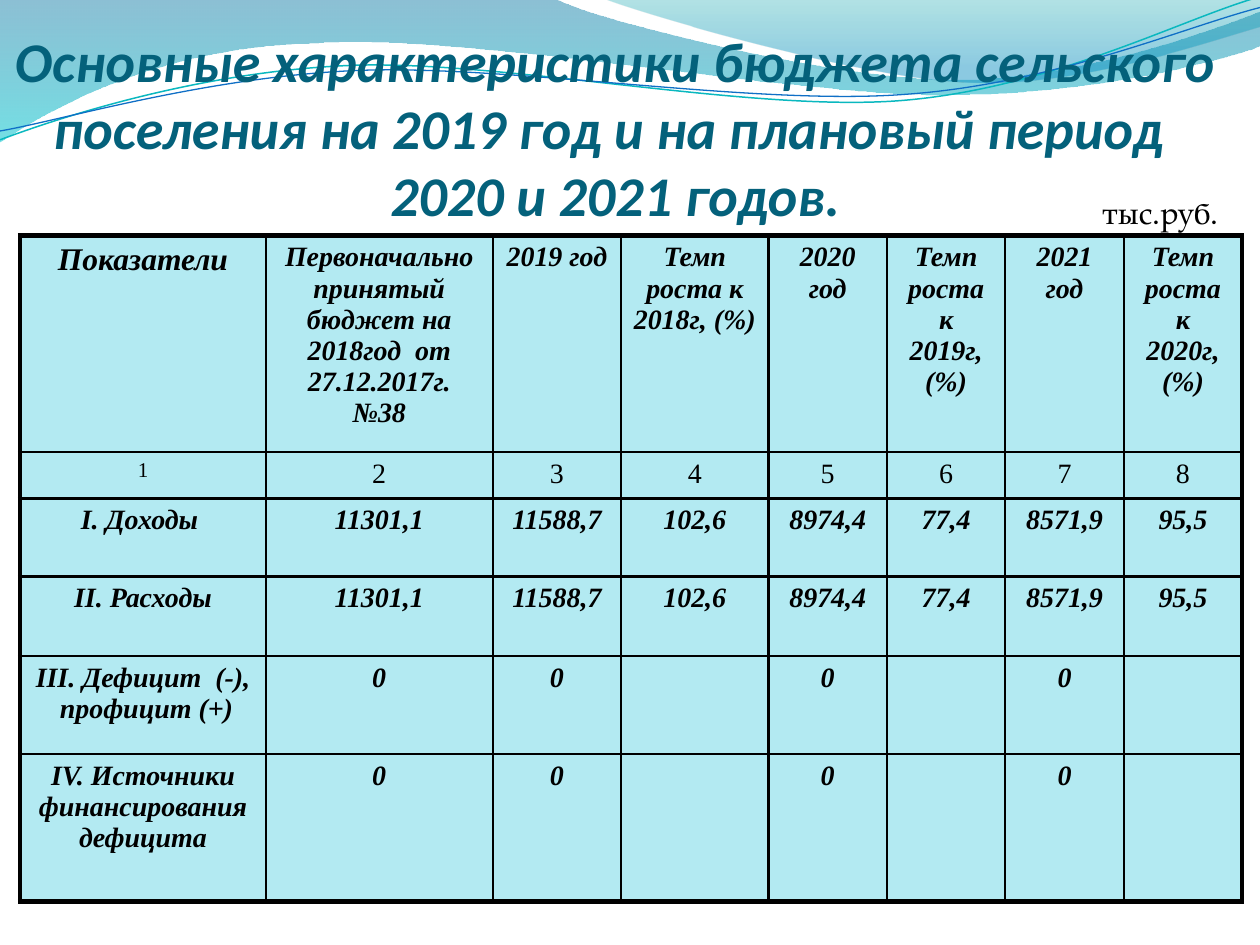
from math import cos, radians, sin

from lxml import etree
from pptx import Presentation
from pptx.dml.color import RGBColor
from pptx.enum.text import MSO_ANCHOR, PP_ALIGN
from pptx.oxml.ns import qn
from pptx.util import Inches, Pt

CENTER, RIGHT = PP_ALIGN.CENTER, PP_ALIGN.RIGHT
TOP, BOTTOM = MSO_ANCHOR.TOP, MSO_ANCHOR.BOTTOM

# Content
TITLE = ("Основные характеристики бюджета сельского поселения "
         "на 2019 год и на плановый период \v2020 и 2021 годов.")
UNIT = "тыс.руб."
ROWS = [
    ["Показатели",
     "Первоначально принятый бюджет на 2018год  от 27.12.2017г. №38",
     "2019 год", "Темп роста к 2018г, (%)",
     "2020 год", "Темп роста к 2019г, (%)",
     "2021 год", "Темп роста к 2020г, (%)"],
    ["1", "2", "3", "4", "5", "6", "7", "8"],
    ["I. Доходы ", "11301,1", "11588,7", "102,6", "8974,4", "77,4",
     "8571,9", "95,5"],
    ["II. Расходы", "11301,1", "11588,7", "102,6", "8974,4", "77,4",
     "8571,9", "95,5"],
    ["III. Дефицит  (-),\n профицит (+)", "0", "0", "", "0", "", "0", ""],
    ["IV. Источники финансирования дефицита",
     "0", "0", "", "0", "", "0", ""],
]
WIDTHS = [1.95, 1.8, 1.02, 1.17] + [0.94] * 4
HEIGHTS = [1.72, 0.32, 0.62, 0.63, 0.78, 1.17]

# Wave outlines: one point is a straight step, three are a Bezier curve
BANDS = [
    ([[(0, 0)], [(4.4, -0.01)],
      [(4.76, 0.17), (6.64, 0.63), (7.58, 0.63)],
      [(8.53, 0.63), (9.58, 0.26), (10, 0.09)], [(10.01, 0.36)],
      [(9.83, 0.44), (8.7, 0.76), (7.46, 0.75)],
      [(6.22, 0.75), (3.82, 0.28), (2.57, 0.34)],
      [(1.29, 0.36), (0.46, 0.83), (-0.01, 1.13)]],
     [(0, "0074A1", 45), (1, "00C6CF", 55)]),
    ([[(4.79, -0.01)],
      [(5.09, 0.11), (6.82, 0.62), (7.69, 0.65)],
      [(8.56, 0.69), (9.61, 0.32), (10, 0.21)], [(10, 0)]],
     [(0, "00A1A9", 30), (0.8, "008BBF", 45)]),
]
LINES = [
    ([[(0, 1.11)], [(0.48, 0.93), (1.58, 0.57), (2.77, 0.52)],
      [(3.95, 0.47), (5.93, 0.89), (7.13, 0.8)],
      [(8.33, 0.71), (9.38, 0.15), (9.98, -0.02)]],
     (4.99, 0.57), "0AB8BF", 0.85),
    ([[(0, 1.04)], [(0.47, 0.96), (1.64, 0.61), (2.83, 0.56)],
      [(4.03, 0.51), (5.97, 0.84), (7.17, 0.75)],
      [(8.36, 0.67), (9.41, 0.21), (10, 0.06)]],
     (5, 0.59), "0F6FC6", 0.75),
]
TILT = 2.7

THEME = {
    "title": ("Calibri", 32, "04617B", True),
    "unit": ("TeX Gyre Pagella", 18, "000000", False),
    "lead": ("Times New Roman", 18, "000000", True),
    "cell": ("Times New Roman", 16, "000000", True),
    "index": ("Times New Roman", 16, "000000", False),
    "first": ("Times New Roman", 12, "000000", False),
    "fill": "B3EAF2", "edge": "000000", "thin": 1.5, "thick": 3,
}


def rgb(code):
    return RGBColor.from_string(code)


def write(frame, text, style, align):
    face, size, color, strong = THEME[style]
    frame.text = text
    for para in frame.paragraphs:
        para.alignment = align
        for run in para.runs:
            font = run.font
            font.name, font.size = face, Pt(size)
            font.bold = font.italic = strong
            font.color.rgb = rgb(color)


def outline(shapes, steps, closed):
    steps = [[(Inches(x), Inches(y)) for x, y in step] for step in steps]
    ends = [step[-1] for step in steps]
    maker = shapes.build_freeform(*ends[0])
    maker.add_line_segments(ends[1:], close=closed)
    shape = maker.convert_to_shape()
    shape.shadow.inherit = False
    # Turn the straight steps that have control points into curves
    parts = list(shape.element.iter(qn("a:lnTo")))
    for part, step in zip(parts, steps[1:]):
        if len(step) == 3:
            curve = etree.Element(qn("a:cubicBezTo"))
            for x, y in step:
                etree.SubElement(curve, qn("a:pt"), x=str(x - shape.left),
                                 y=str(y - shape.top))
            part.getparent().replace(part, curve)
    return shape


def turn(point, pivot):
    angle = radians(TILT)
    dx, dy = point[0] - pivot[0], point[1] - pivot[1]
    return (pivot[0] + dx * cos(angle) - dy * sin(angle),
            pivot[1] + dx * sin(angle) + dy * cos(angle))


def add_band(shapes, steps, stops):
    shape = outline(shapes, steps, True)
    shape.line.fill.background()
    shape.fill.gradient()
    shape.fill.gradient_angle = 270
    for stop, (place, color, _) in zip(shape.fill.gradient_stops, stops):
        stop.position = place
        stop.color.rgb = rgb(color)
    tags = shape.element.spPr.iter(qn("a:srgbClr"))
    for tag, (_, _, alpha) in zip(list(tags), stops):
        etree.SubElement(tag, qn("a:alpha"), val=str(alpha * 1000))


def add_line(shapes, steps, pivot, color, width):
    flat = [[turn(point, pivot) for point in step] for step in steps]
    shape = outline(shapes, flat, False)
    shape.rotation = 360 - TILT
    shape.fill.background()
    shape.line.color.rgb = rgb(color)
    shape.line.width = Pt(width)


def add_text(shapes, box, text, style, align, anchor):
    frame = shapes.add_textbox(*map(Inches, box)).text_frame
    frame.word_wrap = True
    frame.vertical_anchor = anchor
    write(frame, text, style, align)
    return frame


def set_edges(cell, outer):
    props = cell._tc.get_or_add_tcPr()
    for side in "LRTB":
        width = THEME["thick" if side in outer else "thin"]
        line = etree.SubElement(props, qn("a:ln" + side), w=str(Pt(width)))
        fill = etree.SubElement(line, qn("a:solidFill"))
        etree.SubElement(fill, qn("a:srgbClr"), val=THEME["edge"])


def cell_style(r, c):
    if r == 1:
        return "first" if c == 0 else "index"
    return "lead" if (r, c) == (0, 0) else "cell"


def add_grid(shapes):
    box = (0.16, 1.87, sum(WIDTHS), sum(HEIGHTS))
    table = shapes.add_table(len(ROWS), len(WIDTHS),
                             *map(Inches, box)).table
    for col, width in zip(table.columns, WIDTHS):
        col.width = Inches(width)
    last_r, last_c = len(ROWS) - 1, len(WIDTHS) - 1
    for r, row in enumerate(ROWS):
        table.rows[r].height = Inches(HEIGHTS[r])
        for c, text in enumerate(row):
            cell = table.cell(r, c)
            sides = {"L": c == 0, "R": c == last_c,
                     "T": r == 0, "B": r == last_r}
            set_edges(cell, [s for s, on in sides.items() if on])
            cell.fill.solid()
            cell.fill.fore_color.rgb = rgb(THEME["fill"])
            write(cell.text_frame, text, cell_style(r, c), CENTER)


def main():
    deck = Presentation()
    deck.slide_width, deck.slide_height = Inches(10), Inches(7.5)
    shapes = deck.slides.add_slide(deck.slide_layouts[6]).shapes

    # Waves along the top
    for band in BANDS:
        add_band(shapes, *band)
    for line in LINES:
        add_line(shapes, *line)

    # Title, raised clear of the table
    frame = add_text(shapes, (0, 1.02, 9.77, 1.33), TITLE, "title",
                     CENTER, BOTTOM)
    frame.margin_left = frame.margin_right = 0
    frame.margin_bottom = Inches(0.54)

    # Budget table and its unit
    add_grid(shapes)
    add_text(shapes, (7.66, 1.48, 2.11, 0.4), UNIT, "unit", RIGHT, TOP)
    deck.save("out.pptx")


if __name__ == "__main__":
    main()
